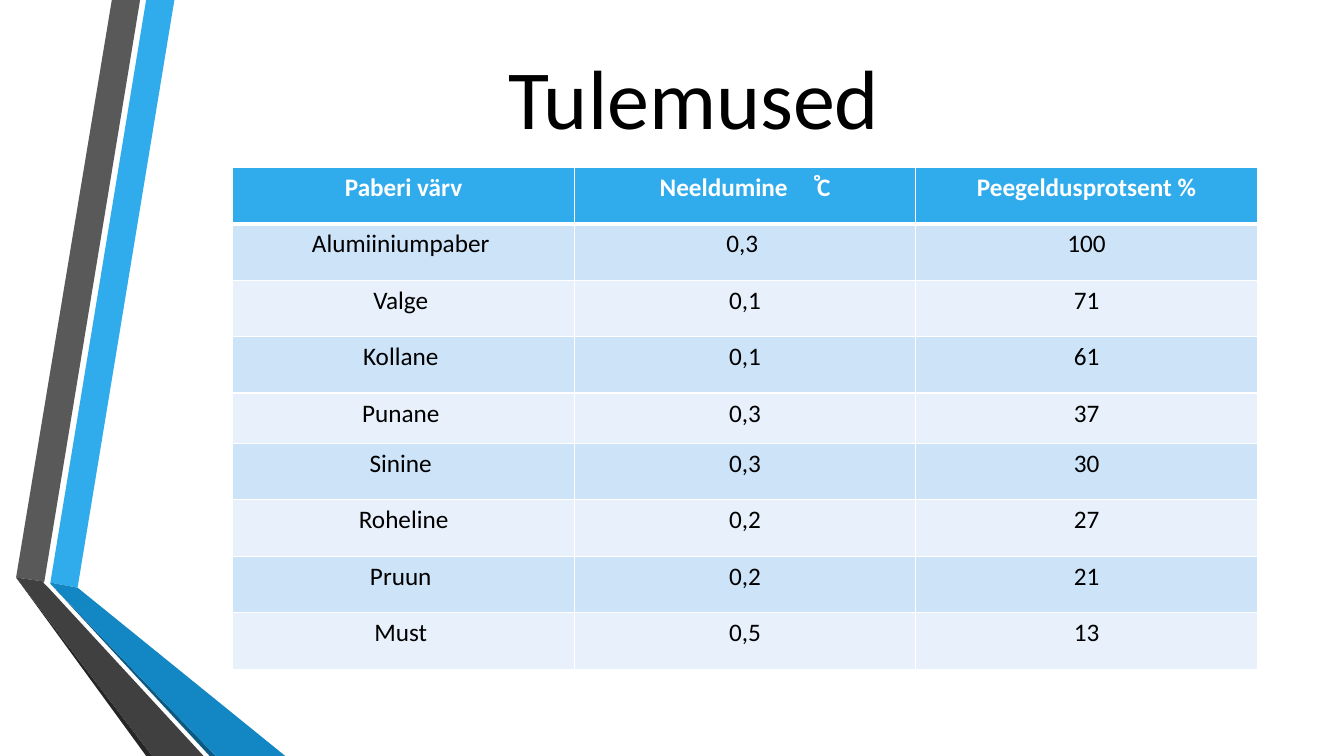
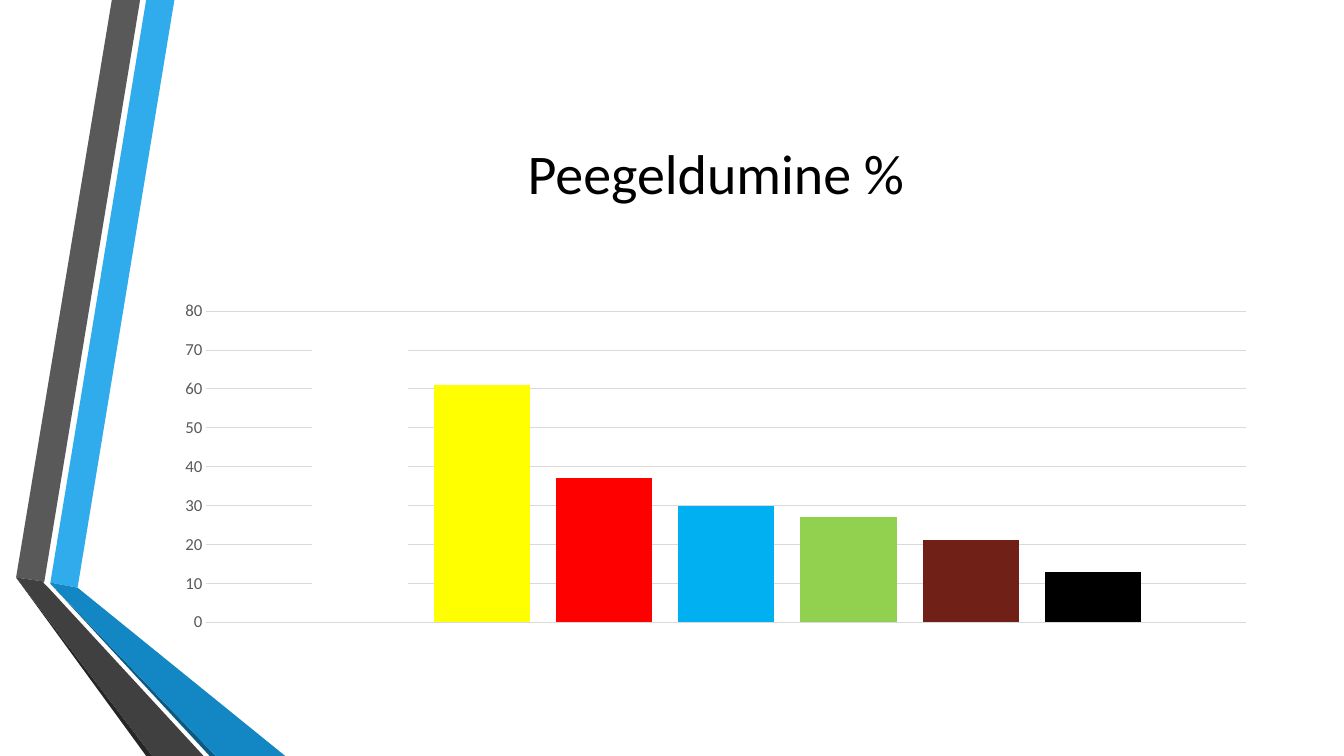
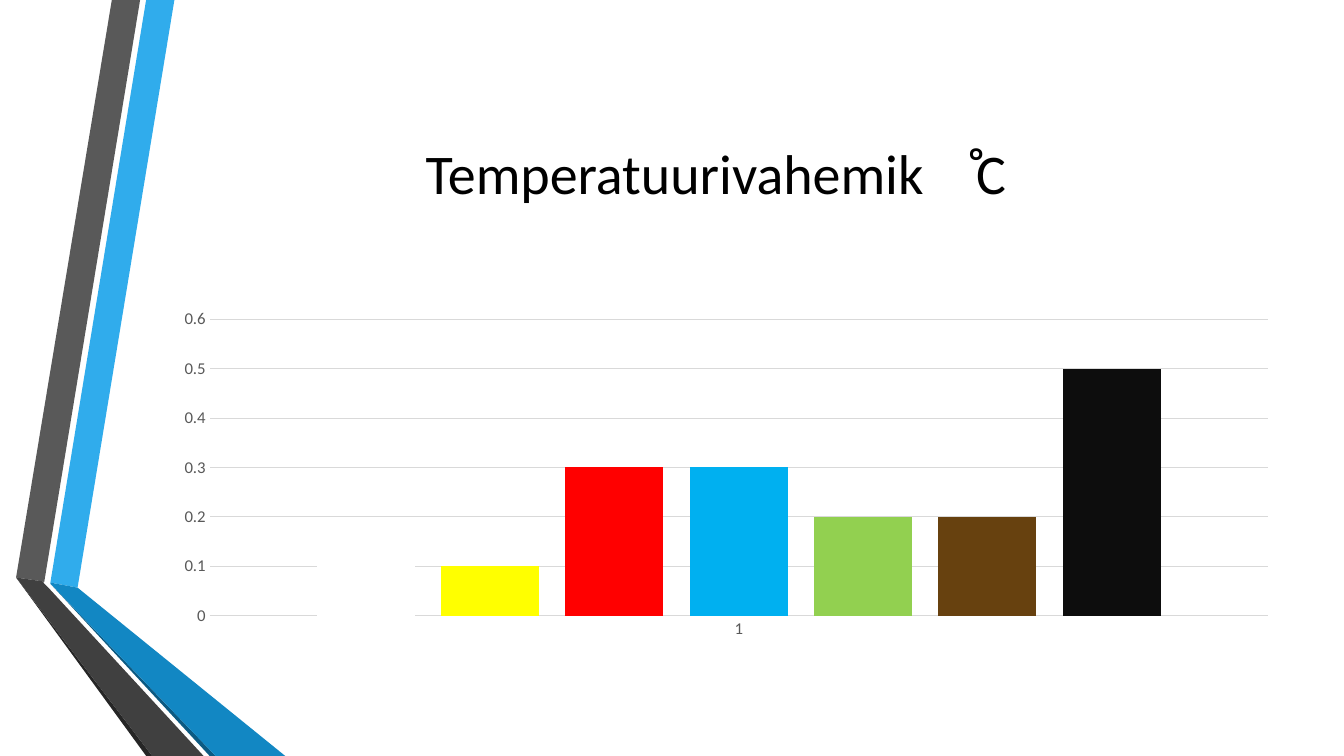
from lxml import etree
from pptx import Presentation
from pptx.chart.data import CategoryChartData
from pptx.dml.color import RGBColor
from pptx.enum.chart import XL_CHART_TYPE, XL_TICK_MARK
from pptx.enum.text import MSO_ANCHOR, MSO_AUTO_SIZE, PP_ALIGN
from pptx.oxml.ns import qn
from pptx.util import Inches, Pt

COLUMNS = XL_CHART_TYPE.COLUMN_CLUSTERED
NO_TICK = XL_TICK_MARK.NONE
TOP, MIDDLE = MSO_ANCHOR.TOP, MSO_ANCHOR.MIDDLE
LEFT, CENTER = PP_ALIGN.LEFT, PP_ALIGN.CENTER
NO_FIT = MSO_AUTO_SIZE.NONE

FONT = "Calibri"
BLACK, WHITE, BLUE = "000000", "FFFFFF", "30ACEC"
LABEL_GREY, GRID_GREY = "595959", "D9D9D9"
ROW_FILLS = ("CDE3F8", "E8F1FB")

TITLE_BOX = (1.62, 0.75, 10.96, 1.92)
CHART_BOX = (1.62, 2.92, 10.96, 3.42)

RIBBONS = (
    (BLUE, ((0.5, 5.78), (0.77, 5.83), (1.73, 0), (1.45, 0))),
    ("595959", ((1.39, 0), (1.11, 0), (0.16, 5.73), (0.44, 5.77))),
    ("262626", ((0.16, 5.73), (1.45, 7.5), (1.51, 7.5))),
    ("0C5A82", ((0.5, 5.79), (2.08, 7.5), (2.14, 7.5))),
    ("1287C3", ((0.5, 5.79), (2.14, 7.5), (2.83, 7.5), (0.77, 5.83), (0.5, 5.78))),
    ("404040", ((2.02, 7.5), (0.48, 5.83), (0.43, 5.78), (0.44, 5.77),
                (0.16, 5.73), (1.51, 7.5))),
)

RESULTS = (
    ("Paberi värv", ("Neeldumine", 12.2, " ̊C"), "Peegeldusprotsent %"),
    ("Alumiiniumpaber ", ("0,3", 4.1, ""), "100"),
    ("Valge ", "0,1", "71"),
    ("Kollane ", "0,1", "61"),
    ("Punane ", "0,3", "37"),
    ("Sinine ", "0,3", "30"),
    ("Roheline", "0,2", "27"),
    ("Pruun ", "0,2", "21"),
    ("Must ", "0,5", "13"),
)
ROW_HEIGHT, SHORT_ROW_HEIGHT, SHORT_ROW = 0.56, 0.5, 4

PAPER_COLORS = (WHITE, "FFFF00", "FF0000", "00B0F0", "92D050")
REFLECTION = (71, 61, 37, 30, 27, 21, 13)
REFLECTION_COLORS = PAPER_COLORS + ("712018", BLACK)
TEMPERATURE = (0.1, 0.1, 0.3, 0.3, 0.2, 0.2, 0.5)
TEMPERATURE_COLORS = PAPER_COLORS + ("67410F", "0D0D0D")
TEMPERATURE_PLOT = (0.042, 0.074, 0.958, 0.876)


def rgb(value):
    """Turn a hex string into a colour."""
    return RGBColor.from_string(value)


def paint(fill, color):
    """Give a fill one solid colour."""
    fill.solid()
    fill.fore_color.rgb = rgb(color)


def set_font(font, size, color, bold=False):
    """Set the face, size, colour and weight of a font."""
    font.name, font.size, font.bold = FONT, Pt(size), bold
    font.color.rgb = rgb(color)


def add_text(p, text, size, color, bold=False):
    """Add a string, or a (before, gap in points, after) triple, as runs."""
    before, gap, after = (text, 0, "") if isinstance(text, str) else text
    for part, spacing in ((before, 0), (" " if gap else "", gap), (after, 0)):
        if part:
            r = p.add_run()
            r.text = part
            set_font(r.font, size, color, bold)
            if spacing:
                r.font._element.set("spc", str(round(spacing * 100)))


def add_title(slide, text, box=TITLE_BOX, size=40, align=CENTER, anchor=MIDDLE):
    """Place and fill the title placeholder."""
    sp = slide.shapes.title
    sp.left, sp.top, sp.width, sp.height = map(Inches, box)
    tf = sp.text_frame
    tf.auto_size, tf.word_wrap, tf.vertical_anchor = NO_FIT, True, anchor
    p = tf.paragraphs[0]
    p.alignment = align
    add_text(p, text, size, BLACK)


def add_ribbons(prs, slide):
    """Draw the folded ribbons and move them to the master."""
    for color, points in RIBBONS:
        start, *rest = [(Inches(x), Inches(y)) for x, y in points]
        builder = slide.shapes.build_freeform(*start)
        builder.add_line_segments(rest, close=True)
        sp = builder.convert_to_shape()
        paint(sp.fill, color)
        sp.line.fill.background()
        sp.shadow.inherit = False
        prs.slide_master.shapes.element.append(sp.element)


def set_borders(cell, bottom):
    """Draw white cell borders with the given bottom width."""
    props = cell._tc.get_or_add_tcPr()
    widths = (("lnL", 1), ("lnR", 1), ("lnT", 1), ("lnB", bottom))
    for i, (tag, width) in enumerate(widths):
        ln = etree.Element(qn("a:" + tag), w=str(Pt(width)))
        fill = etree.SubElement(ln, qn("a:solidFill"))
        etree.SubElement(fill, qn("a:srgbClr"), val=WHITE)
        props.insert(i, ln)


def add_results_table(slide, rows, left, top, width):
    """Add the table of results with a header and alternating rows."""
    count = len(rows[0])
    height = ROW_HEIGHT * (len(rows) - 1) + SHORT_ROW_HEIGHT
    table = slide.shapes.add_table(len(rows), count, Inches(left), Inches(top),
                                   Inches(width), Inches(height)).table
    for column in table.columns:
        column.width = Inches(width / count)
    for i, texts in enumerate(rows):
        header = i == 0
        table.rows[i].height = Inches(SHORT_ROW_HEIGHT if i == SHORT_ROW else ROW_HEIGHT)
        for j, text in enumerate(texts):
            cell = table.cell(i, j)
            paint(cell.fill, BLUE if header else ROW_FILLS[(i - 1) % 2])
            set_borders(cell, 3 if header else 1)
            p = cell.text_frame.paragraphs[0]
            p.alignment = CENTER
            add_text(p, text, 18, WHITE if header else BLACK, header)


def style_axis(axis):
    """Remove the ticks of an axis and set its label font."""
    axis.major_tick_mark = axis.minor_tick_mark = NO_TICK
    set_font(axis.tick_labels.font, 12, LABEL_GREY)


def style_line(line):
    """Make a thin light grey line."""
    line.width = Pt(0.75)
    line.color.rgb = rgb(GRID_GREY)


def set_plot_area(chart, bounds):
    """Fix the inner plot area as fractions of the chart."""
    area = chart.element.find(".//" + qn("c:plotArea"))
    for old in area.findall(qn("c:layout")):
        area.remove(old)
    layout = etree.Element(qn("c:layout"))
    manual = etree.SubElement(layout, qn("c:manualLayout"))
    settings = (("layoutTarget", "inner"), ("xMode", "edge"), ("yMode", "edge"),
                *zip("xywh", bounds))
    for tag, value in settings:
        etree.SubElement(manual, qn("c:" + tag), val=str(value))
    area.insert(0, layout)


def add_column_chart(slide, box, values, colors, top, step, show_category=False, plot_area=None):
    """Add a column chart with one coloured series for each paper."""
    data = CategoryChartData()
    data.categories = ["1"]
    for i, value in enumerate(values, 1):
        data.add_series(f"Series {i}", [value])
    chart = slide.shapes.add_chart(COLUMNS, *map(Inches, box), data).chart
    chart.has_title = chart.has_legend = False
    set_font(chart.font, 10, BLACK)
    plot = chart.plots[0]
    plot.gap_width, plot.overlap, plot.vary_by_categories = 219, -27, False
    for series, color in zip(plot.series, colors):
        paint(series.format.fill, color)
        series.format.line.fill.background()
        series.invert_if_negative = False
    value_axis, category_axis = chart.value_axis, chart.category_axis
    style_axis(value_axis)
    value_axis.minimum_scale, value_axis.maximum_scale = 0, top
    value_axis.major_unit = step
    value_axis.format.line.fill.background()
    style_line(value_axis.major_gridlines.format.line)
    style_axis(category_axis)
    style_line(category_axis.format.line)
    category_axis.visible = show_category
    if plot_area:
        set_plot_area(chart, plot_area)


def main():
    """Build the three slides and save them."""
    prs = Presentation()
    prs.slide_width, prs.slide_height = Inches(13.33), Inches(7.5)
    results, reflection, temperature = [
        prs.slides.add_slide(prs.slide_layouts[5]) for _ in range(3)]
    add_ribbons(prs, results)

    add_results_table(results, RESULTS, 2.31, 1.66, 10.16)
    add_title(results, "Tulemused", (4.94, 0.4, 4.01, 1.11), 60, LEFT, TOP)

    add_title(reflection, "Peegeldumine %")
    add_column_chart(reflection, CHART_BOX, REFLECTION, REFLECTION_COLORS, 80, 10)

    add_title(temperature, ("Temperatuurivahemik", 18, " ̊C"))
    add_column_chart(temperature, CHART_BOX, TEMPERATURE, TEMPERATURE_COLORS,
                     0.6, 0.1, True, TEMPERATURE_PLOT)
    prs.save("out.pptx")


if __name__ == "__main__":
    main()
